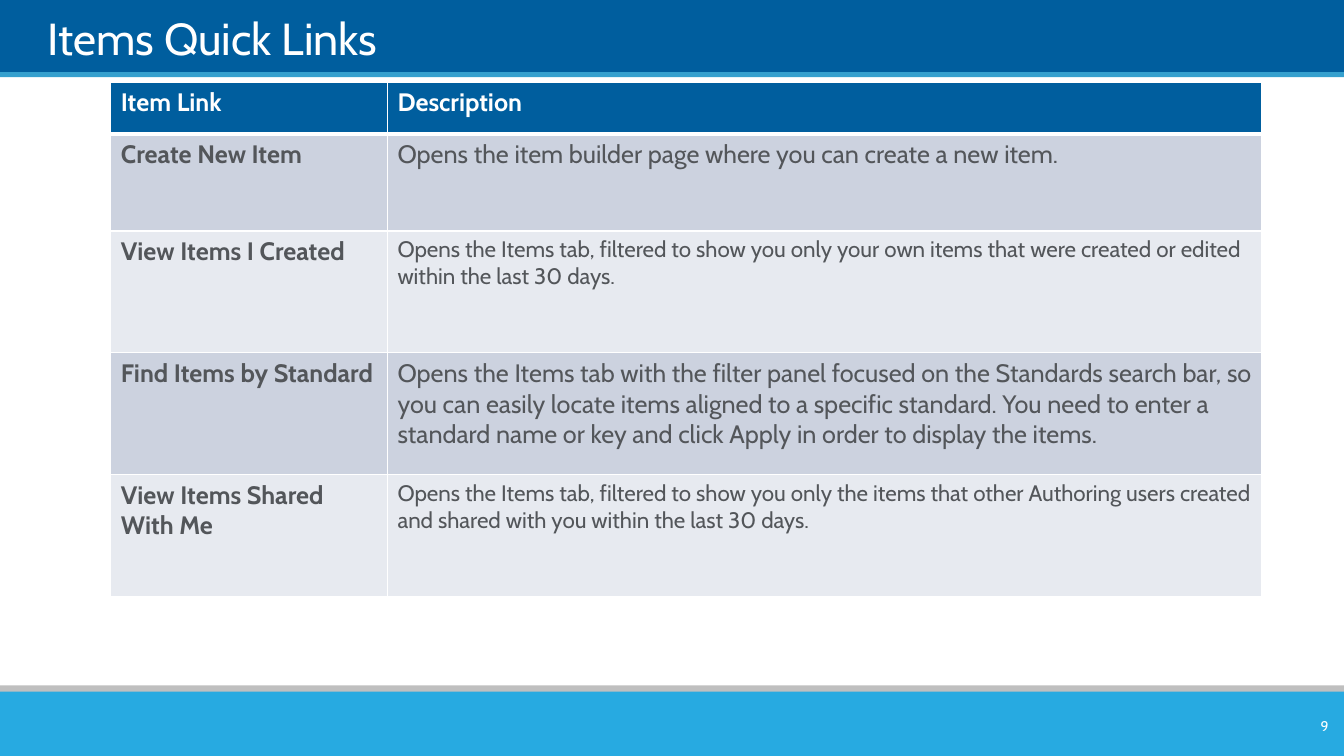
from lxml import etree
from pptx import Presentation
from pptx.dml.color import RGBColor
from pptx.enum.shapes import MSO_SHAPE
from pptx.enum.text import MSO_ANCHOR, PP_ALIGN
from pptx.oxml.ns import qn
from pptx.util import Pt

RECT = MSO_SHAPE.RECTANGLE
LEFT, RIGHT = PP_ALIGN.LEFT, PP_ALIGN.RIGHT
MIDDLE, BOTTOM = MSO_ANCHOR.MIDDLE, MSO_ANCHOR.BOTTOM

WHITE = RGBColor(0xFF, 0xFF, 0xFF)
NAVY = RGBColor(0x00, 0x5E, 0x9E)
BLUE = RGBColor(0x35, 0xA0, 0xCE)
SKY = RGBColor(0x27, 0xAA, 0xE1)
SILVER = RGBColor(0xBF, 0xBF, 0xBF)
GREY = RGBColor(0x53, 0x56, 0x5A)
DARK = RGBColor(0xCC, 0xD2, 0xDF)
LIGHT = RGBColor(0xE7, 0xEA, 0xF0)

FONT = "Cabin"
WIDTH, HEIGHT = 960, 540
BANDS = [(-0.7, 54, NAVY), (51.6, 3.6, BLUE),
         (489.6, 10, SILVER), (494, 46, SKY)]
COLS = [197.6, 624.6]
ROWS = [37.4, 69.1, 87.1, 87.1, 87.1]
HEAD = ("Item Link", "Description")
LINKS = [
    ("Create New Item",
     "Opens the item builder page where you can create a new item.", 18),
    ("View Items I Created",
     "Opens the Items tab, filtered to show you only your own items that "
     "were created or edited within the last 30 days.", 16),
    ("Find Items by Standard",
     "Opens the Items tab with the filter panel focused on the Standards "
     "search bar, so you can easily locate items aligned to a specific "
     "standard. You need to enter a standard name or key and click Apply "
     "in order to display the items.", 18),
    ("View Items Shared With Me",
     "Opens the Items tab, filtered to show you only the items that other "
     "Authoring users created and shared with you within the last 30 days.",
     16),
]


def write(frame, text, size=18, color=WHITE, bold=False, align=LEFT):
    par = frame.paragraphs[0]
    par.alignment = align
    run = par.add_run()
    run.text = text
    font = run.font
    font.name, font.size, font.bold = FONT, Pt(size), bold
    font.color.rgb = color


def add_band(slide, top, height, color):
    band = slide.shapes.add_shape(RECT, 0, Pt(top), Pt(WIDTH), Pt(height))
    band.shadow.inherit = False
    band.fill.solid()
    band.fill.fore_color.rgb = color
    band.line.fill.background()


def add_label(slide, box, text, anchor, inset=0, **style):
    frame = slide.shapes.add_textbox(*map(Pt, box)).text_frame
    frame.word_wrap = True
    frame.vertical_anchor = anchor
    frame.margin_left = frame.margin_right = Pt(inset)
    frame.margin_top = frame.margin_bottom = 0
    write(frame, text, **style)


def add_edge(cell, side, width):
    props = cell._tc.get_or_add_tcPr()
    line = etree.SubElement(props, qn("a:" + side), w=str(Pt(width)))
    fill = etree.SubElement(line, qn("a:solidFill"))
    etree.SubElement(fill, qn("a:srgbClr"), val=str(WHITE))


def fill_cell(cell, text, tint, top=1, base=1, **style):
    for side, width in (("lnL", 1), ("lnR", 1), ("lnT", top), ("lnB", base)):
        add_edge(cell, side, width)
    cell.fill.solid()
    cell.fill.fore_color.rgb = tint
    write(cell.text_frame, text, **style)


def add_grid(slide):
    table = slide.shapes.add_table(
        len(ROWS), len(COLS), Pt(79.2), Pt(58.5),
        Pt(sum(COLS)), Pt(sum(ROWS))).table
    for col, width in zip(table.columns, COLS):
        col.width = Pt(width)
    for row, height in zip(table.rows, ROWS):
        row.height = Pt(height)
    for col, text in enumerate(HEAD):
        fill_cell(table.cell(0, col), text, NAVY, base=3, bold=True)
    for row, (name, about, size) in enumerate(LINKS, 1):
        tint = DARK if row % 2 else LIGHT
        top = 3 if row == 1 else 1
        fill_cell(table.cell(row, 0), name, tint, top, color=GREY, bold=True)
        fill_cell(table.cell(row, 1), about, tint, top, color=GREY, size=size)


def main():
    deck = Presentation()
    deck.slide_width, deck.slide_height = Pt(WIDTH), Pt(HEIGHT)
    slide = deck.slides.add_slide(deck.slide_layouts[6])
    for top, height, color in BANDS:
        add_band(slide, top, height, color)
    add_label(slide, (33.8, 5, 895, 41), "Items Quick Links", BOTTOM, size=32)
    add_grid(slide)
    add_label(slide, (900.7, 507.6, 55.4, 21.6), "9", MIDDLE, inset=7.2,
              size=10, align=RIGHT)
    deck.save("out.pptx")


if __name__ == "__main__":
    main()
